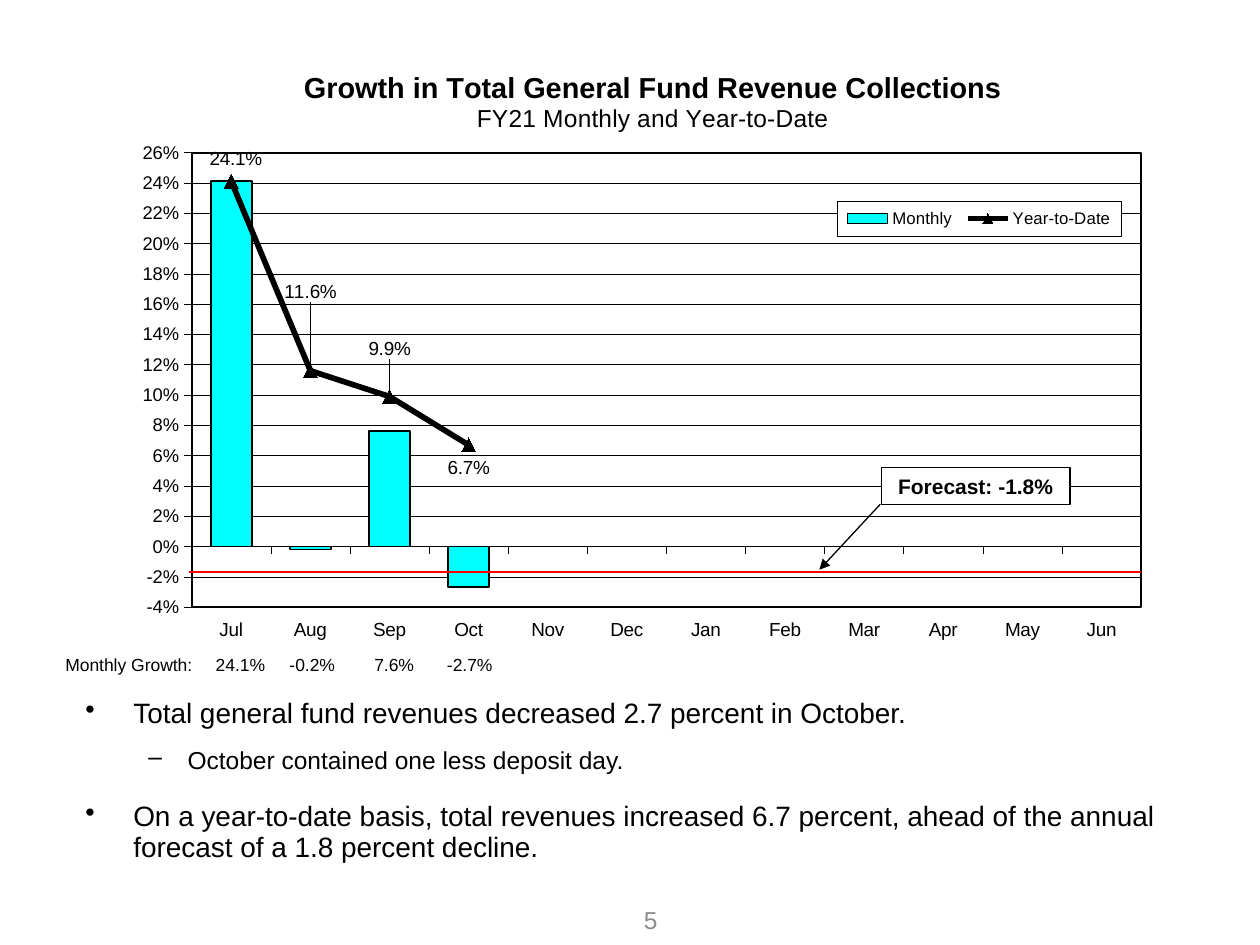
from pptx import Presentation
from pptx.chart.data import CategoryChartData
from pptx.dml.color import RGBColor
from pptx.enum.chart import (XL_CHART_TYPE, XL_LABEL_POSITION, XL_LEGEND_POSITION,
                             XL_MARKER_STYLE, XL_TICK_LABEL_POSITION, XL_TICK_MARK)
from pptx.enum.shapes import MSO_CONNECTOR, MSO_SHAPE
from pptx.enum.text import MSO_ANCHOR, PP_ALIGN
from pptx.oxml import parse_xml
from pptx.oxml.ns import nsdecls, qn
from pptx.util import Inches, Pt

BLACK = RGBColor(0, 0, 0)
WHITE = RGBColor(255, 255, 255)
CYAN = RGBColor(0, 255, 255)
RED = RGBColor(255, 0, 0)
GRAY = RGBColor(0x8C, 0x8C, 0x8C)
FONT = "Arial"
MONTHS = "Jul Aug Sep Oct Nov Dec Jan Feb Mar Apr May Jun".split()
MONTHLY = [0.241, -0.002, 0.076, -0.027]
TO_DATE = [0.241, 0.116, 0.099, 0.067]
LOW, HIGH, STEP = -0.04, 0.26, 0.02
PLOT = (0.095, 0.163, 0.841, 0.763)
KEY = (0.667, 0.244, 0.251, 0.06)
# Label of each year-to-date point: position and shift as shares of the chart
LABELS = [("ABOVE", 0.004, 0), ("ABOVE", 0, -0.094),
          ("ABOVE", 0, -0.042), ("BELOW", 0, 0)]
# Level, text, size, space before, left margin, hanging indent
POINTS = [
    ("•", "Total general fund revenues decreased 2.7 percent in October.", 16, 0, 0.38, 0.38),
    ("–", "October contained one less deposit day.", 14, 10.8, 0.81, 0.31),
    ("•", "On a year-to-date basis, total revenues increased 6.7 percent, "
          "ahead of the annual forecast of a 1.8 percent decline.", 16, 16, 0.38, 0.38),
]


def inner(box, x, y, w=0, h=0):
    """Turn shares of a box into a box in inches."""
    left, top, wide, high = box
    return left + x * wide, top + y * high, w * wide, h * high


def style(font, size, color=BLACK, bold=False):
    font.name, font.size, font.bold = FONT, Pt(size), bold
    font.color.rgb = color


def stroke(line, width, color=BLACK):
    line.color.rgb, line.width = color, Pt(width)


def write(shape, text, size, color=BLACK, bold=False, align=PP_ALIGN.LEFT):
    frame = shape.text_frame
    frame.word_wrap = True
    frame.text = text
    para = frame.paragraphs[0]
    para.alignment = align
    style(para.runs[0].font, size, color, bold)
    return para


def text_box(slide, box):
    return slide.shapes.add_textbox(*map(Inches, box))


def rule(slide, start, end, width, color=BLACK, arrow=False):
    line = slide.shapes.add_connector(MSO_CONNECTOR.STRAIGHT, *map(Inches, start + end))
    stroke(line.line, width, color)
    props = line._element.spPr
    if arrow:
        props.find(qn("a:ln")).append(parse_xml(f'<a:tailEnd {nsdecls("a")} type="triangle"/>'))
    props.append(parse_xml(f'<a:effectLst {nsdecls("a")}/>'))


def layout(x, y, w=None, h=None, target=None, edge=True):
    parts = f'<c:layoutTarget val="{target}"/>' if target else ""
    if edge:
        parts += '<c:xMode val="edge"/><c:yMode val="edge"/>'
    for tag, value in zip("xywh", (x, y, w, h)):
        if value is not None:
            parts += f'<c:{tag} val="{value}"/>'
    return parse_xml(f'<c:layout {nsdecls("c")}><c:manualLayout>{parts}</c:manualLayout></c:layout>')


def frame_props(fill, width):
    return parse_xml(f'<c:spPr {nsdecls("c", "a")}>{fill}<a:ln w="{Pt(width)}"><a:solidFill>'
                     f'<a:srgbClr val="{BLACK}"/></a:solidFill></a:ln></c:spPr>')


def add_title(chart):
    title = chart.chart_title
    frame = title.text_frame
    frame.text = "Growth in Total General Fund Revenue Collections"
    style(frame.paragraphs[0].runs[0].font, 16.5, bold=True)
    second = frame.add_paragraph()
    second.text = "FY21 Monthly and Year-to-Date"
    style(second.font, 14)
    style(second.runs[0].font, 14)
    node = title._element
    for old in node.findall(qn("c:layout")):
        node.remove(old)
    node.find(qn("c:tx")).addnext(layout(0.191, 0.017))


def add_axes(chart):
    for axis, size in ((chart.category_axis, 10.8), (chart.value_axis, 10.5)):
        style(axis.tick_labels.font, size)
        stroke(axis.format.line, 0.27)
        axis.major_tick_mark = XL_TICK_MARK.OUTSIDE
        axis.minor_tick_mark = XL_TICK_MARK.NONE
    chart.category_axis.tick_label_position = XL_TICK_LABEL_POSITION.LOW
    axis = chart.value_axis
    axis.minimum_scale, axis.maximum_scale, axis.major_unit = LOW, HIGH, STEP
    axis.tick_labels.number_format = "0%"
    axis.tick_labels.number_format_is_linked = False
    axis.has_major_gridlines = True
    stroke(axis.major_gridlines.format.line, 0.27)


def split_line(chart):
    """Move the second series from the columns to a line plot."""
    bars = chart.plots[0]._element
    ser = bars.findall(qn("c:ser"))[1]
    for flag in ser.findall(qn("c:invertIfNegative")):
        ser.remove(flag)
    line = parse_xml(f'<c:lineChart {nsdecls("c")}><c:grouping val="standard"/>'
                     '<c:varyColors val="0"/><c:marker val="1"/></c:lineChart>')
    line.insert(2, ser)
    for axis in bars.findall(qn("c:axId")):
        line.append(parse_xml(f'<c:axId {nsdecls("c")} val="{axis.get("val")}"/>'))
    bars.addnext(line)


def add_series(chart):
    split_line(chart)
    bars, line = chart.plots
    bars.gap_width, bars.vary_by_categories = 94, False
    bar = bars.series[0]
    bar.invert_if_negative = False
    bar.format.fill.solid()
    bar.format.fill.fore_color.rgb = CYAN
    stroke(bar.format.line, 1.08)
    trend = line.series[0]
    trend.smooth = False
    stroke(trend.format.line, 3.23)
    mark = trend.marker
    mark.style, mark.size = XL_MARKER_STYLE.TRIANGLE, 8
    mark.format.fill.solid()
    mark.format.fill.fore_color.rgb = BLACK
    stroke(mark.format.line, 0.75)
    for i, (side, dx, dy) in enumerate(LABELS):
        label = trend.points[i].data_label
        style(label.font, 10.8)
        label.position = XL_LABEL_POSITION[side]
        if dx or dy:
            node = trend._element.find(qn("c:dLbls")).findall(qn("c:dLbl"))[i]
            node.find(qn("c:idx")).addnext(layout(dx, dy, edge=False))


def add_legend(chart):
    chart.has_legend = True
    legend = chart.legend
    legend.position = XL_LEGEND_POSITION.RIGHT
    legend.include_in_layout = False
    style(legend.font, 9.6)
    node = legend._element
    for old in node.findall(qn("c:layout")):
        node.remove(old)
    node.find(qn("c:legendPos")).addnext(layout(*KEY))
    fill = f'<a:solidFill><a:srgbClr val="{WHITE}"/></a:solidFill>'
    node.find(qn("c:txPr")).addprevious(frame_props(fill, 0.27))


def growth_chart(slide, box):
    data = CategoryChartData(number_format="0.0%")
    data.categories = MONTHS
    for name, values in (("Monthly", MONTHLY), ("Year-to-Date", TO_DATE)):
        data.add_series(name, values + [None] * (len(MONTHS) - len(values)))
    chart = slide.shapes.add_chart(XL_CHART_TYPE.COLUMN_CLUSTERED, *map(Inches, box), data).chart
    style(chart.font, 10.8)
    add_title(chart)
    add_axes(chart)
    add_series(chart)
    add_legend(chart)
    area = chart._chartSpace.chart.plotArea
    for old in area.findall(qn("c:layout")):
        area.remove(old)
    area.insert(0, layout(*PLOT, target="inner"))
    area.append(frame_props("<a:noFill/>", 1.08))


def forecast(slide, box):
    note = slide.shapes.add_shape(MSO_SHAPE.RECTANGLE, *map(Inches, inner(box, 0.706, 0.691, 0.167, 0.063)))
    note.shadow.inherit = False
    note.fill.solid()
    note.fill.fore_color.rgb = WHITE
    stroke(note.line, 0.75)
    write(note, "Forecast: -1.8%", 12, bold=True, align=PP_ALIGN.CENTER)
    rule(slide, inner(box, 0.705, 0.753)[:2], inner(box, 0.651, 0.863)[:2], 0.75, arrow=True)
    rule(slide, inner(box, 0.093, 0.867)[:2], inner(box, 0.936, 0.867)[:2], 1.5, RED)


def growth_row(slide, box):
    cells = [f"{value:.1%}" for value in MONTHLY]
    para = write(text_box(slide, box), "\t".join(["Monthly Growth:"] + cells), 10)
    stops = "".join(f'<a:tab pos="{Inches(x)}" algn="ctr"/>' for x in (1.39, 1.96, 2.61, 3.21))
    para._p.get_or_add_pPr().append(parse_xml(f'<a:tabLst {nsdecls("a")}>{stops}</a:tabLst>'))


def bullets(slide, box):
    frame = text_box(slide, box).text_frame
    frame.word_wrap = True
    for i, (sign, text, size, gap, left, hang) in enumerate(POINTS):
        para = frame.add_paragraph() if i else frame.paragraphs[0]
        para.text = text
        para.line_spacing, para.space_before = 0.9, Pt(gap)
        style(para.runs[0].font, size)
        props = para._p.get_or_add_pPr()
        props.set("marL", str(Inches(left)))
        props.set("indent", str(-Inches(hang)))
        props.append(parse_xml(f'<a:buChar {nsdecls("a")} char="{sign}"/>'))


def page_number(slide, box):
    shape = text_box(slide, box)
    write(shape, "5", 14, GRAY, align=PP_ALIGN.CENTER)
    shape.text_frame.vertical_anchor = MSO_ANCHOR.MIDDLE


def main():
    deck = Presentation()
    deck.slide_width, deck.slide_height = Inches(10), Inches(7.5)
    slide = deck.slides.add_slide(deck.slide_layouts[6])
    box = (0.67, 0.44, 8.96, 4.73)
    growth_chart(slide, box)
    bullets(slide, (0.58, 5.5, 8.92, 1.67))
    growth_row(slide, (0.42, 5.14, 8.83, 0.27))
    forecast(slide, box)
    page_number(slide, (4, 7.1, 2.33, 0.4))
    deck.save("out.pptx")


if __name__ == "__main__":
    main()
